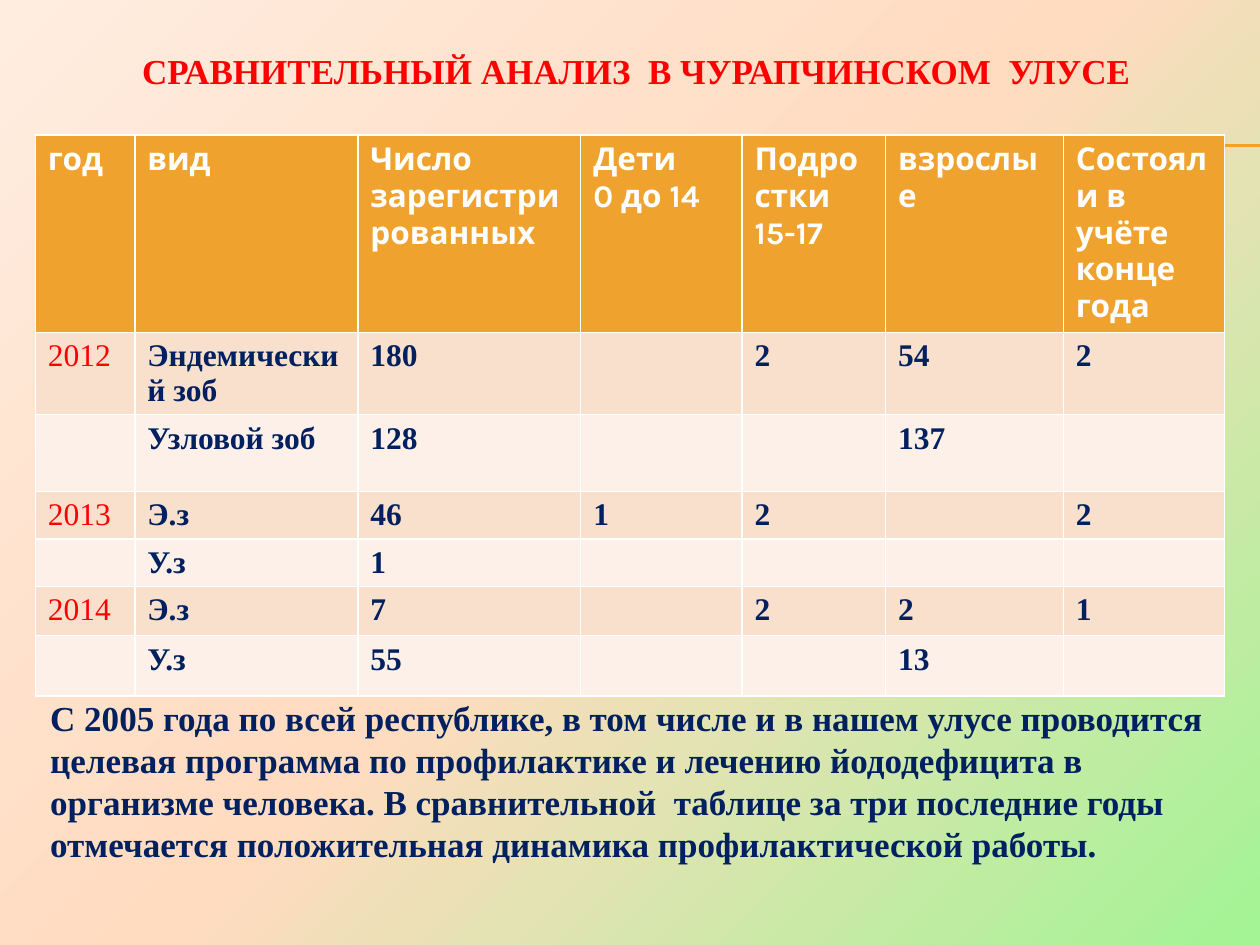
from dataclasses import dataclass

from lxml.etree import SubElement as Sub
from pptx import Presentation
from pptx.dml.color import RGBColor
from pptx.enum.shapes import MSO_CONNECTOR as Conn
from pptx.enum.text import MSO_ANCHOR as Anchor, PP_ALIGN as Align
from pptx.oxml import parse_xml
from pptx.oxml.ns import nsdecls, qn
from pptx.util import Inches, Pt

WIDE, HIGH = Inches(10), Inches(7.5)
SERIF, SANS = "Times New Roman", "Karla"
RED, NAVY, WHITE, GOLD = "FF0000", "002060", "FFFFFF", "F0A22E"
BANDS = ("F9E0CD", "FCF0E8")
STOPS = ((0, "A2F494"), (50, "FFDBC0"), (100, "FFEDE0"))

COLS = (0.79, 1.77, 1.77, 1.28, 1.14, 1.41, 1.28)
ROWS = (1.28, 0.61, 0.61, 0.35, 0.34, 0.39, 0.48)
DATA = (
    ("год", "вид", "Число зарегистрированных", "Дети\n0 до 14",
     "Подростки\n15-17", "взрослые", "Состояли в учёте  конце года"),
    ("2012", "Эндемический зоб", "180", "", "2", "54", "2"),
    ("", "Узловой зоб", "128", "", "", "137", ""),
    ("2013", "Э.з", "46", "1", "2", "", "2"),
    ("", "У.з", "1", "", "", "", ""),
    ("2014", "Э.з", "7", "", "2", "2", "1"),
    ("", "У.з", "55", "", "", "13", ""),
)
TITLE = "СРАВНИТЕЛЬНЫЙ АНАЛИЗ  В ЧУРАПЧИНСКОМ  УЛУСЕ"
NOTE = (
    "С 2005 года по всей республике, в том числе и в нашем улусе проводится "
    "целевая программа по профилактике и лечению йододефицита в организме "
    "человека. В сравнительной  таблице за три последние годы отмечается "
    "положительная динамика профилактической работы."
)


@dataclass(frozen=True)
class Box:
    left: float
    top: float
    width: float
    height: float

    def spots(self) -> tuple:
        return (int(WIDE * self.left), int(HIGH * self.top),
                int(WIDE * self.width), int(HIGH * self.height))


@dataclass(frozen=True)
class Style:
    face: str
    size: int
    hue: str
    bold: bool = True


HEAD = Style(SANS, 18, WHITE)
YEAR = Style(SERIF, 18, RED, False)
BODY = Style(SERIF, 18, NAVY)


def tint(code: str) -> RGBColor:
    return RGBColor.from_string(code)


def write(frame, text: str, style: Style) -> None:
    for i, line in enumerate(text.split("\n")):
        para = frame.paragraphs[0] if i == 0 else frame.add_paragraph()
        if not line:
            end = Sub(para._p, qn("a:endParaRPr"), sz=str(style.size * 100))
            Sub(end, qn("a:latin"), typeface=style.face)
            continue
        run = para.add_run()
        run.text = line
        font = run.font
        font.name, font.size, font.bold = style.face, Pt(style.size), style.bold
        font.color.rgb = tint(style.hue)


def paint(slide) -> None:
    slide.background.fill.solid()
    stops = "".join(
        f'<a:gs pos="{pos * 1000}"><a:srgbClr val="{code}"/></a:gs>'
        for pos, code in STOPS)
    grad = parse_xml(
        f'<a:gradFill {nsdecls("a")} rotWithShape="1"><a:gsLst>{stops}</a:gsLst>'
        '<a:path path="circle"><a:fillToRect l="100000" t="100000"/></a:path>'
        "</a:gradFill>")
    props = slide._element.find(".//" + qn("p:bgPr"))
    props.replace(props[0], grad)


def rule(slide, top: float) -> None:
    line = slide.shapes.add_connector(
        Conn.STRAIGHT, Inches(0.56), Inches(top), WIDE, Inches(top))
    line.line.color.rgb = tint(GOLD)
    line.line.width = Pt(0.75)
    Sub(line._element.spPr, qn("a:effectLst"))


def head(slide, box: Box) -> None:
    title = slide.shapes.title
    title.left, title.top, title.width, title.height = box.spots()
    frame = title.text_frame
    frame.word_wrap = True
    frame.vertical_anchor = Anchor.MIDDLE
    write(frame, TITLE, Style(SERIF, 20, RED))
    frame.paragraphs[0].alignment = Align.CENTER


def grid(slide, left: float, top: float) -> None:
    table = slide.shapes.add_table(
        len(ROWS), len(COLS), Inches(left), Inches(top),
        Inches(sum(COLS)), Inches(sum(ROWS))).table
    for col, size in zip(table.columns, COLS):
        col.width = Inches(size)
    for row, size in zip(table.rows, ROWS):
        row.height = Inches(size)
    for r, line in enumerate(DATA):
        for c, text in enumerate(line):
            cell = table.cell(r, c)
            cell.fill.solid()
            cell.fill.fore_color.rgb = tint(BANDS[(r - 1) % 2] if r else GOLD)
            style = HEAD if r == 0 else YEAR if c == 0 else BODY
            write(cell.text_frame, text, style)


def note(slide, box: Box) -> None:
    frame = slide.shapes.add_textbox(*box.spots()).text_frame
    frame.word_wrap = True
    write(frame, NOTE, Style(SERIF, 20, NAVY))


def main() -> None:
    deck = Presentation()
    deck.slide_width, deck.slide_height = WIDE, HIGH
    slide = deck.slides.add_slide(deck.slide_layouts[5])
    paint(slide)
    for top in (1.15, 1.16):
        rule(slide, top)
    head(slide, Box(0.05, 0.04, 0.91, 0.07))
    grid(slide, 0.28, 1.07)
    note(slide, Box(0.03, 0.73, 0.94, 0.19))
    deck.save("out.pptx")


if __name__ == "__main__":
    main()
